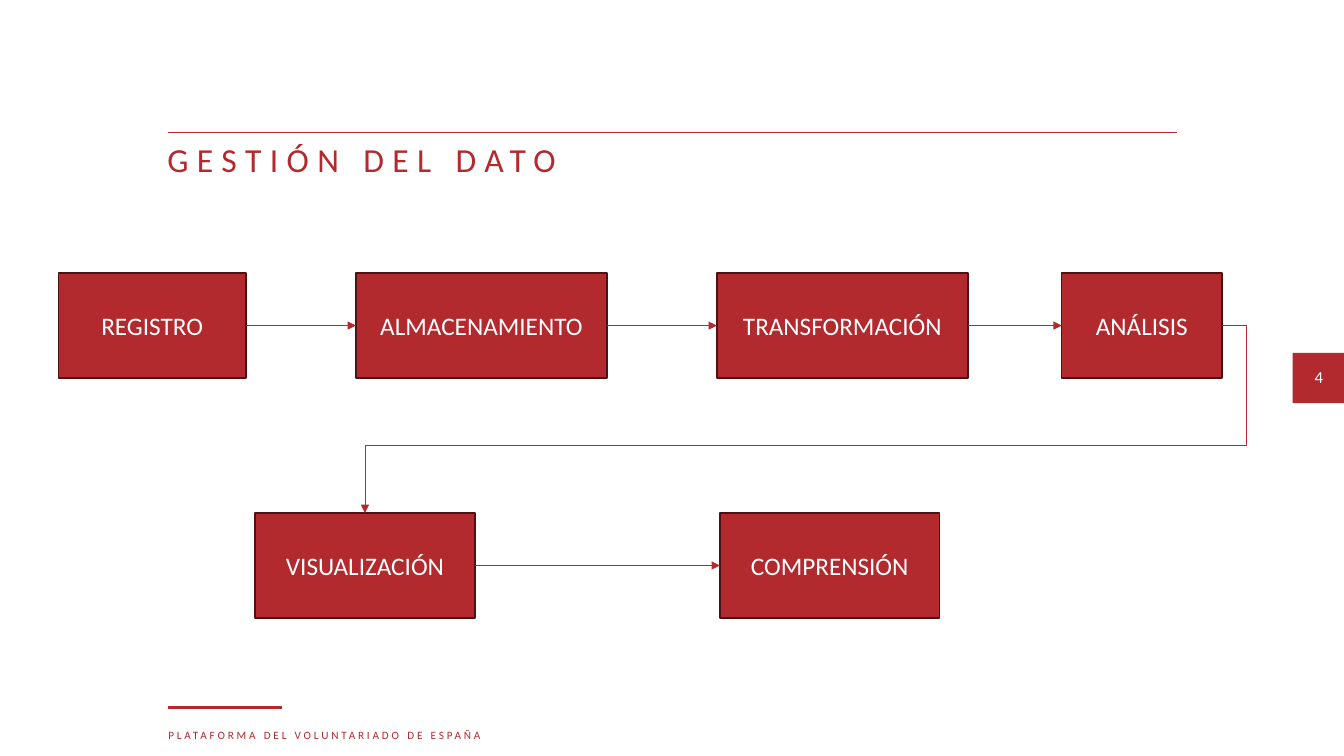
import lxml.etree
import pptx
import pptx.dml.color
import pptx.enum.shapes
import pptx.enum.text
import pptx.oxml.ns
import pptx.util

Inches = pptx.util.Inches
Pt = pptx.util.Pt
qn = pptx.oxml.ns.qn
ALIGN = pptx.enum.text.PP_ALIGN
ANCHOR = pptx.enum.text.MSO_ANCHOR
CONNECTOR = pptx.enum.shapes.MSO_CONNECTOR
RECTANGLE = pptx.enum.shapes.MSO_SHAPE.RECTANGLE

RED = pptx.dml.color.RGBColor(0xB2, 0x29, 0x2E)
DARK_RED = pptx.dml.color.RGBColor(0x4E, 0x12, 0x14)
WHITE = pptx.dml.color.RGBColor(0xFF, 0xFF, 0xFF)
FONT = "Calibri"

# Connection sites of a rectangle
TOP, LEFT, RIGHT = 0, 1, 3

STEP_HEIGHT = 1.04
# Each row: top, then (label, left, width) of its steps
STEP_ROWS = [
    (2.71, [("REGISTRO", 0.58, 1.86), ("ALMACENAMIENTO", 3.53, 2.49),
            ("TRANSFORMACIÓN", 7.11, 2.49), ("ANÁLISIS", 10.53, 1.59)]),
    (5.09, [("VISUALIZACIÓN", 2.53, 2.18), ("COMPRENSIÓN", 7.14, 2.18)]),
]


def write_text(frame, text, size, color, align=ALIGN.LEFT, anchor=ANCHOR.TOP, spacing=0):
    frame.word_wrap = True
    frame.vertical_anchor = anchor
    para = frame.paragraphs[0]
    para.alignment = align
    span = para.add_run()
    span.text = text
    span.font.name = FONT
    span.font.size = Pt(size)
    span.font.color.rgb = color
    if spacing:
        span.font._element.set("spc", str(spacing * 100))
    return para


def add_text(page, left, top, width, height, text, size, color, **style):
    box = page.shapes.add_textbox(Inches(left), Inches(top), Inches(width), Inches(height))
    write_text(box.text_frame, text, size, color, **style)
    return box


def add_block(page, left, top, width, height, outline=None):
    block = page.shapes.add_shape(RECTANGLE, Inches(left), Inches(top),
                                  Inches(width), Inches(height))
    block.shadow.inherit = False
    block.fill.solid()
    block.fill.fore_color.rgb = RED
    if outline is None:
        block.line.fill.background()
    else:
        block.line.color.rgb = outline
        block.line.width = Pt(1)
    return block


def add_step(page, label, left, top, width):
    step = add_block(page, left, top, width, STEP_HEIGHT, DARK_RED)
    write_text(step.text_frame, label, 18, WHITE, ALIGN.CENTER, ANCHOR.MIDDLE)
    return step


def add_line(page, start, end, weight, kind=CONNECTOR.STRAIGHT):
    line = page.shapes.add_connector(kind, *(Inches(value) for value in start + end))
    line.line.color.rgb = RED
    line.line.width = Pt(weight)
    lxml.etree.SubElement(line._element.spPr, qn("a:effectLst"))
    return line


def add_arrow(page, source, target, source_site=RIGHT, target_site=LEFT,
              kind=CONNECTOR.STRAIGHT):
    arrow = add_line(page, (0, 0), (0, 0), 0.5, kind)
    arrow.begin_connect(source, source_site)
    arrow.end_connect(target, target_site)
    outline = arrow.line._get_or_add_ln()
    lxml.etree.SubElement(outline, qn("a:tailEnd"), type="triangle")
    return arrow


def bend_around(arrow, **adjustments):
    geometry = arrow._element.spPr.find(qn("a:prstGeom"))
    geometry.set("prst", "bentConnector4")
    guides = geometry.find(qn("a:avLst"))
    for name, value in adjustments.items():
        lxml.etree.SubElement(guides, qn("a:gd"), name=name, fmla=f"val {value}")


def add_title(page, text):
    title = page.shapes.title
    title.left, title.top = Inches(1.66), Inches(1.37)
    title.width, title.height = Inches(9.4), Inches(0.59)
    title.text_frame.margin_left = 0
    title.text_frame.auto_size = pptx.enum.text.MSO_AUTO_SIZE.NONE
    para = write_text(title.text_frame, text, 24, RED, spacing=6)
    para.line_spacing = 0.9


def add_frame(page):
    # Rules above the title and the footer
    add_line(page, (1.67, 1.31), (11.67, 1.31), 0.75)
    add_line(page, (1.67, 7.02), (2.8, 7.02), 2.25)
    # Footer
    footer = add_text(page, 1.67, 7.18, 6.67, 0.24,
                      "PLATAFORMA DEL VOLUNTARIADO DE ESPAÑA", 8, RED, spacing=2)
    footer.text_frame.margin_left = 0
    # Page number tab
    add_block(page, 12.82, 3.5, 0.51, 0.5)
    add_text(page, 12.71, 3.59, 0.74, 0.3, "4", 12, WHITE,
             align=ALIGN.CENTER, anchor=ANCHOR.MIDDLE)


def add_process(page):
    rows = [[add_step(page, label, left, top, width) for label, left, width in steps]
            for top, steps in STEP_ROWS]
    # Arrows along each row
    for row in rows:
        for source, target in zip(row, row[1:]):
            add_arrow(page, source, target)
    # Bent arrow from the first row to the second
    turn = add_arrow(page, rows[0][-1], rows[1][0], RIGHT, TOP, CONNECTOR.ELBOW)
    bend_around(turn, adj1=-2900, adj2=63900)


def main():
    deck = pptx.Presentation()
    deck.slide_width, deck.slide_height = Inches(13.33), Inches(7.5)
    page = deck.slides.add_slide(deck.slide_layouts.get_by_name("Title Only"))
    add_frame(page)
    add_title(page, "GESTIÓN DEL DATO")
    add_process(page)
    deck.save("out.pptx")


if __name__ == "__main__":
    main()
